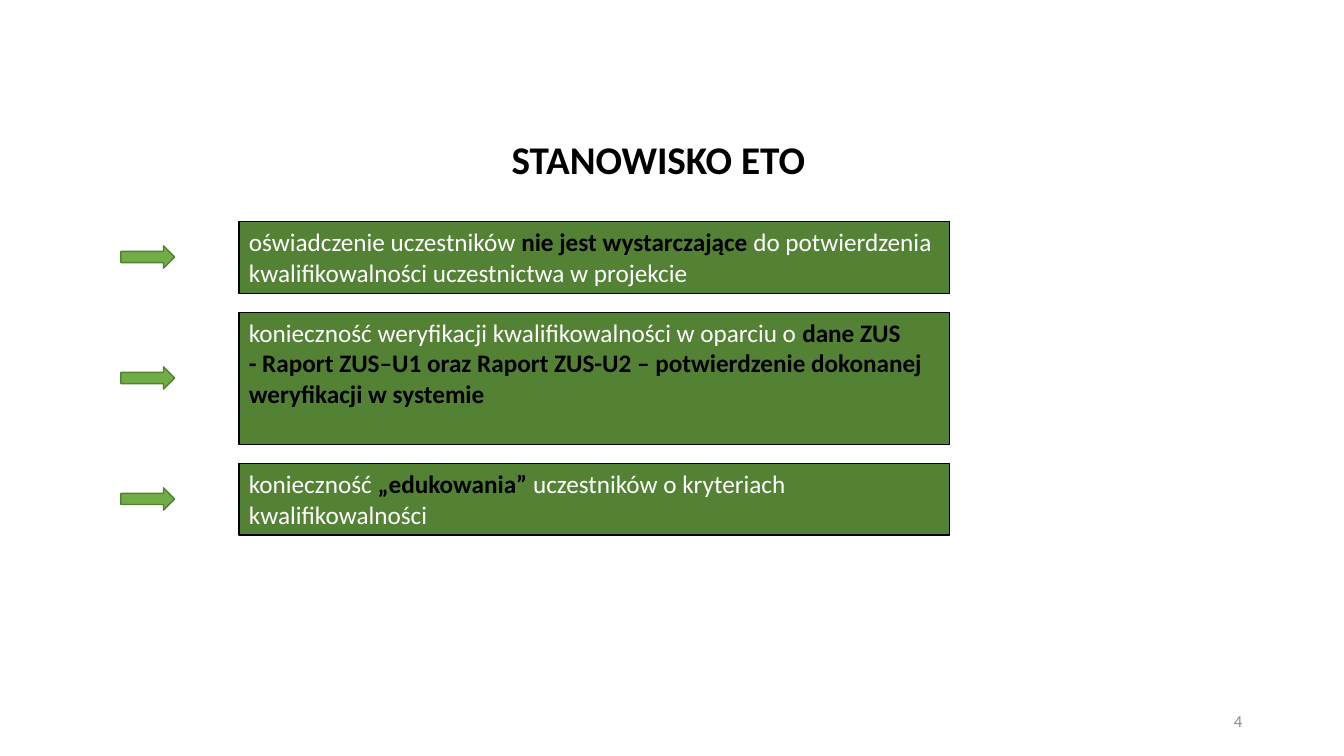
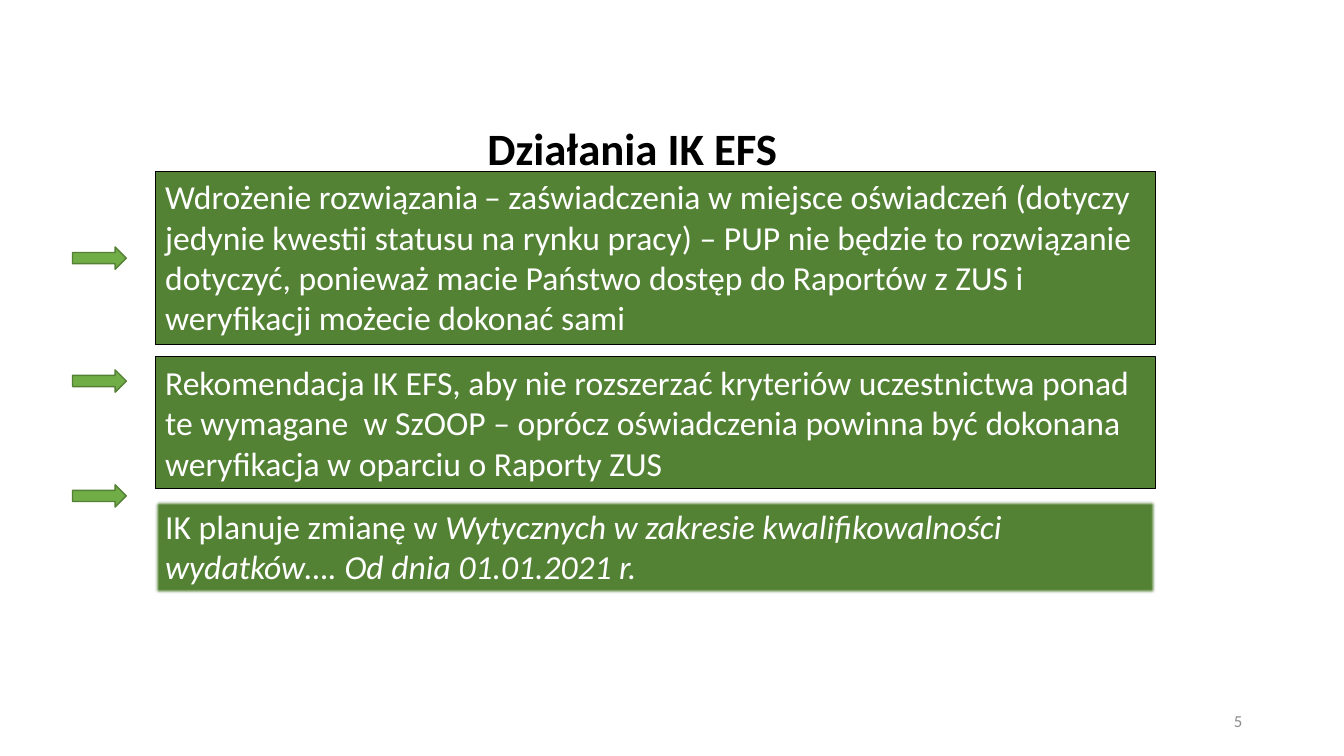
from dataclasses import dataclass

from lxml import etree
from pptx import Presentation, util as u
from pptx.dml.color import RGBColor
from pptx.enum import shapes, text
from pptx.oxml import ns


@dataclass(frozen=True)
class Theme:
    font: str = "Calibri"
    black: str = "000000"
    white: str = "FFFFFF"
    box_fill: str = "548235"
    arrow_fill: str = "70AD47"
    arrow_line: str = "538035"
    number: str = "8C8C8C"
    number_size: int = 12
    small_gap_size: int = 18
    soft_edge: int = 2


theme = Theme()
deck = Presentation()
deck.slide_width, deck.slide_height = u.Inches(13.33), u.Inches(7.5)
column, row = deck.slide_width / 100, deck.slide_height / 100


def cells(left, top, width, height):
    return [int(left * column), int(top * row), int(width * column), int(height * row)]


def style(span, size, color, bold=False, italic=False):
    font = span.font
    font.name, font.size, font.bold, font.italic = theme.font, u.Pt(size), bold, italic
    font.color.rgb = RGBColor.from_string(color)


pages = [
    dict(
        number="4", title="STANOWISKO ETO", title_size=28,
        title_cells=(37.2, 17.2, 23.56, 7.6),
        left=17.78, width=52.88, top=29.33, gap=2.53, size=18, line=1,
        arrow_left=9, arrow_tops=(32.53, 48.53, 64.53),
        boxes=[
            (9.47, False, [[("oświadczenie uczestników ", ""),
                            ("nie jest wystarczające ", "strong"),
                            ("do potwierdzenia kwalifikowalności uczestnictwa w projekcie", "")]]),
            (17.47, False, [[("konieczność weryfikacji kwalifikowalności w oparciu o ", ""),
                             ("dane ZUS", "strong")],
                            [("- Raport ZUS–U1 oraz Raport ZUS-U2 – potwierdzenie dokonanej "
                              "weryfikacji w systemie", "strong")]]),
            (9.47, False, [[("konieczność ", ""), ("„edukowania” ", "strong"),
                            ("uczestników o kryteriach kwalifikowalności", "")]]),
        ],
    ),
    dict(
        number="5", title="Działania IK EFS", title_size=32,
        title_cells=(35.4, 15.33, 23.33, 8.53),
        left=11.55, width=74.42, top=22.67, gap=1.6, size=24, line=0.75,
        arrow_left=5.4, arrow_tops=(32.67, 48.93, 64.13),
        boxes=[
            (22.93, False, [[("Wdrożenie rozwiązania", ""), (" ", "small"),
                             ("– zaświadczenia w miejsce oświadczeń (dotyczy jedynie kwestii "
                              "statusu na rynku pracy) – PUP nie będzie to rozwiązanie dotyczyć, "
                              "ponieważ macie Państwo dostęp do Raportów z ZUS i weryfikacji "
                              "możecie dokonać sami", "")]]),
            (17.47, False, [[("Rekomendacja IK EFS, aby nie rozszerzać kryteriów uczestnictwa "
                              "ponad te wymagane  w SzOOP – oprócz oświadczenia powinna być "
                              "dokonana weryfikacja w oparciu o Raporty ZUS", "")]]),
            (12.13, True, [[("IK planuje zmianę w ", ""),
                            ("Wytycznych w zakresie kwalifikowalności wydatków…. "
                             "Od dnia 01.01.2021 r.", "italic")]]),
        ],
    ),
]

for content in pages:
    page = deck.slides.add_slide(deck.slide_layouts[5])

    title = page.shapes.title
    title.left, title.top, title.width, title.height = cells(*content["title_cells"])
    frame = title.text_frame
    frame.text = content["title"]
    frame.word_wrap = False
    frame.auto_size = text.MSO_AUTO_SIZE.NONE
    frame.vertical_anchor = text.MSO_ANCHOR.TOP
    frame.paragraphs[0].alignment = text.PP_ALIGN.CENTER
    style(frame.paragraphs[0].runs[0], content["title_size"], theme.black, bold=True)

    top = content["top"]
    for height, soft, paragraphs in content["boxes"]:
        box = page.shapes.add_shape(
            shapes.MSO_SHAPE.RECTANGLE,
            *cells(content["left"], top, content["width"], height))
        top += height + content["gap"]
        box.shadow.inherit = False
        box.fill.solid()
        box.fill.fore_color.rgb = RGBColor.from_string(theme.box_fill)
        box.line.color.rgb = RGBColor.from_string(theme.black)
        box.line.width = u.Pt(content["line"])
        if soft:
            effects = box.element.spPr.find(ns.qn("a:effectLst"))
            etree.SubElement(effects, ns.qn("a:softEdge"), rad=str(u.Pt(theme.soft_edge)))
        frame = box.text_frame
        frame.word_wrap = True
        frame.vertical_anchor = text.MSO_ANCHOR.TOP
        for index, spans in enumerate(paragraphs):
            para = frame.add_paragraph() if index else frame.paragraphs[0]
            para.alignment = text.PP_ALIGN.LEFT
            for words, kind in spans:
                span = para.add_run()
                span.text = words
                style(span,
                      theme.small_gap_size if kind == "small" else content["size"],
                      theme.black if kind == "strong" else theme.white,
                      bold=kind == "strong", italic=kind == "italic")

    for arrow_top in content["arrow_tops"]:
        arrow = page.shapes.add_shape(
            shapes.MSO_SHAPE.RIGHT_ARROW, *cells(content["arrow_left"], arrow_top, 4, 2.95))
        arrow.shadow.inherit = False
        arrow.fill.solid()
        arrow.fill.fore_color.rgb = RGBColor.from_string(theme.arrow_fill)
        arrow.line.color.rgb = RGBColor.from_string(theme.arrow_line)
        arrow.line.width = u.Pt(1)

    number = page.shapes.add_textbox(*cells(70.67, 92.67, 22.5, 5.33))
    frame = number.text_frame
    frame.text = content["number"]
    frame.word_wrap = True
    frame.vertical_anchor = text.MSO_ANCHOR.MIDDLE
    frame.paragraphs[0].alignment = text.PP_ALIGN.RIGHT
    style(frame.paragraphs[0].runs[0], theme.number_size, theme.number)

deck.save("out.pptx")
